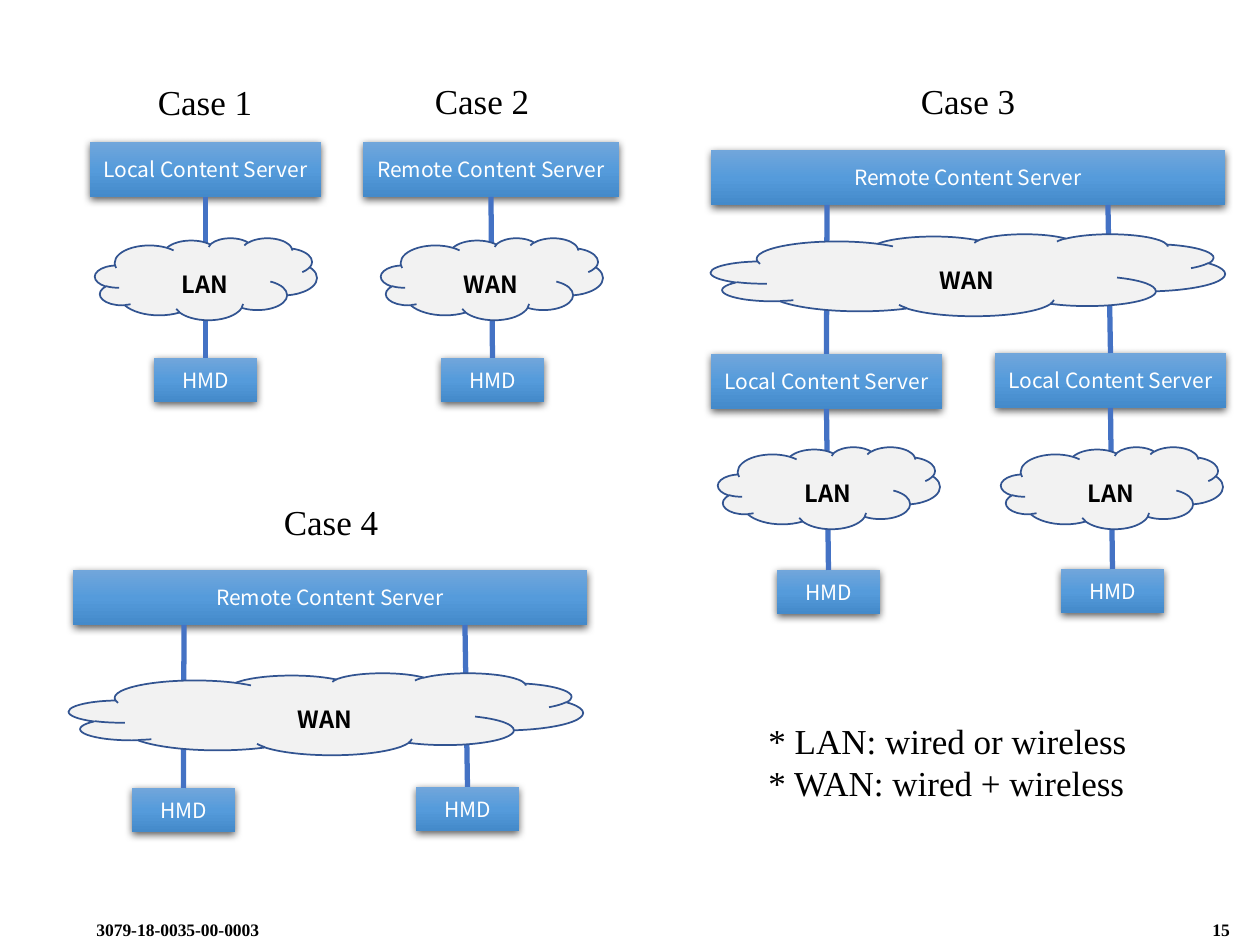
from lxml.etree import SubElement
from pptx import Presentation
from pptx.dml.color import RGBColor
from pptx.enum.shapes import MSO_CONNECTOR as Connector, MSO_SHAPE as Shape
from pptx.enum.text import MSO_ANCHOR as Anchor, PP_ALIGN as Align
from pptx.oxml import parse_xml
from pptx.oxml.ns import nsdecls, qn
from pptx.util import Pt

PX = 914400 / 126
SERIF, SANS = "Times New Roman", "Noto Sans CJK KR"
BLACK, WHITE = "000000", "FFFFFF"
LOCAL, REMOTE, HMD = "Local Content Server", "Remote Content Server", "HMD"
SERVER_H, HMD_H, CLOUD_H = 55, 44, 82
HMD_W, LOCAL_W, REMOTE_W, CLOUD_W, WIDE = 103, 231, 256, 222, 514

# text, centre x, top
CASES = [("Case 1", 205, 74), ("Case 2", 482, 73), ("Case 3", 968, 73), ("Case 4", 331, 494)]
# key: text, left, top, width, height
NODES = {
    "server 1": (LOCAL, 90, 142, LOCAL_W, SERVER_H),
    "hmd 1": (HMD, 154, 358, HMD_W, HMD_H),
    "server 2": (REMOTE, 363, 142, REMOTE_W, SERVER_H),
    "hmd 2": (HMD, 441, 358, HMD_W, HMD_H),
    "server 3": (REMOTE, 711, 150, WIDE, SERVER_H),
    "local 3a": (LOCAL, 711, 354, LOCAL_W, SERVER_H),
    "local 3b": (LOCAL, 995, 353, LOCAL_W, SERVER_H),
    "hmd 3a": (HMD, 777, 570, HMD_W, HMD_H),
    "hmd 3b": (HMD, 1061, 569, HMD_W, HMD_H),
    "server 4": (REMOTE, 73, 570, WIDE, SERVER_H),
    "hmd 4a": (HMD, 132, 788, HMD_W, HMD_H),
    "hmd 4b": (HMD, 416, 787, HMD_W, HMD_H),
}
# upper node, lower node, x where the link leaves a wide server (None: its middle)
LINKS = [
    ("server 1", "hmd 1", None), ("server 2", "hmd 2", None),
    ("server 3", "local 3a", 827), ("server 3", "local 3b", 1108),
    ("local 3a", "hmd 3a", None), ("local 3b", "hmd 3b", None),
    ("server 4", "hmd 4a", 184), ("server 4", "hmd 4b", 465),
]
# text, left, top, width
CLOUDS = [
    ("LAN", 95, 238, CLOUD_W), ("WAN", 381, 238, CLOUD_W),
    ("WAN", 711, 234, WIDE), ("LAN", 718, 447, CLOUD_W),
    ("LAN", 1001, 447, CLOUD_W), ("WAN", 69, 673, WIDE),
]
LEGEND = ["* LAN: wired or wireless", "* WAN: wired + wireless"]
# text, left, top, width, height
FOOTERS = [("3079-18-0035-00-0003", 84, 913, 662, 32), ("15", 1200, 913, 60, 32)]

NODE_GRADIENT = [(0, "71A6DB"), (50, "559BDB"), (100, "448ACA")]


def px(*lengths):
    return [round(length * PX) for length in lengths]


def rgb(value):
    return RGBColor.from_string(value)


def write(shape, lines, font, size, color, bold=False, align=Align.CENTER, wrap=True, margin=None):
    frame = shape.text_frame
    frame.word_wrap = wrap
    if margin is not None:
        frame.margin_left = frame.margin_right = frame.margin_top = frame.margin_bottom = margin
    frame.text = "\n".join(lines)
    for paragraph in frame.paragraphs:
        paragraph.alignment = align
        paragraph.font.name, paragraph.font.size = font, Pt(size)
        paragraph.font.bold = bold
        paragraph.font.color.rgb = rgb(color)
        for run in paragraph.runs:
            SubElement(run.font._element, qn("a:ea")).set("typeface", font)


def add_node(shapes, text, *box):
    node = shapes.add_shape(Shape.RECTANGLE, *px(*box))
    node.line.fill.background()
    node.shadow.inherit = False
    stops = "".join(f'<a:gs pos="{pos * 1000}"><a:srgbClr val="{color}"/></a:gs>'
                    for pos, color in NODE_GRADIENT)
    properties = node._element.spPr
    properties.insert(2, parse_xml(
        f'<a:gradFill {nsdecls("a")} rotWithShape="1"><a:gsLst>{stops}</a:gsLst>'
        '<a:lin ang="5400000" scaled="0"/></a:gradFill>'))
    properties.find(qn("a:effectLst")).append(parse_xml(
        f'<a:outerShdw {nsdecls("a")} blurRad="57150" dist="19050" dir="5400000" algn="ctr" '
        'rotWithShape="0"><a:srgbClr val="000000"><a:alpha val="63000"/></a:srgbClr></a:outerShdw>'))
    node.text_frame.vertical_anchor = Anchor.MIDDLE
    write(node, [text], SANS, 12, WHITE, margin=0)
    return node


def add_link(shapes, upper, lower, start_x):
    start = px(start_x or 0)[0]
    link = shapes.add_connector(Connector.STRAIGHT, start, upper.top + upper.height,
                                lower.left + lower.width // 2, lower.top)
    if start_x is None:
        link.begin_connect(upper, 2)
    link.end_connect(lower, 0)
    link.line.color.rgb = rgb("4472C4")
    link.line.width = Pt(3)
    SubElement(link._element.spPr, qn("a:effectLst"))


def add_cloud(shapes, text, left, top, width):
    group = shapes.add_group_shape().shapes
    cloud = group.add_shape(Shape.CLOUD, *px(left, top, width, CLOUD_H))
    cloud.shadow.inherit = False
    cloud.fill.solid()
    cloud.fill.fore_color.rgb = rgb("F2F2F2")
    cloud.line.color.rgb = rgb("325491")
    cloud.line.width = Pt(1)
    label = group.add_textbox(*px(left + width / 4 - 1, top + 28, width / 2, 42))
    write(label, [text], SANS, 13.5, BLACK, bold=True, margin=px(4)[0])


def main():
    prs = Presentation()
    prs.slide_width, prs.slide_height = px(1260, 945)
    shapes = prs.slides.add_slide(prs.slide_layouts[6]).shapes

    for text, *box in FOOTERS:
        write(shapes.add_textbox(*px(*box)), [text], SERIF, 10, BLACK, bold=True, align=Align.LEFT)
    nodes = {key: add_node(shapes, *node) for key, node in NODES.items()}
    for upper, lower, start_x in LINKS:
        add_link(shapes, nodes[upper], nodes[lower], start_x)
    for cloud in CLOUDS:
        add_cloud(shapes, *cloud)
    for text, center, top in CASES:
        title = shapes.add_textbox(*px(center - 60, top, 120, 55))
        write(title, [text], SERIF, 20, BLACK, wrap=False)
    legend = shapes.add_textbox(*px(756, 713, 387, 97))
    write(legend, LEGEND, SERIF, 20, BLACK, align=Align.LEFT, wrap=False)

    prs.save("out.pptx")


if __name__ == "__main__":
    main()
